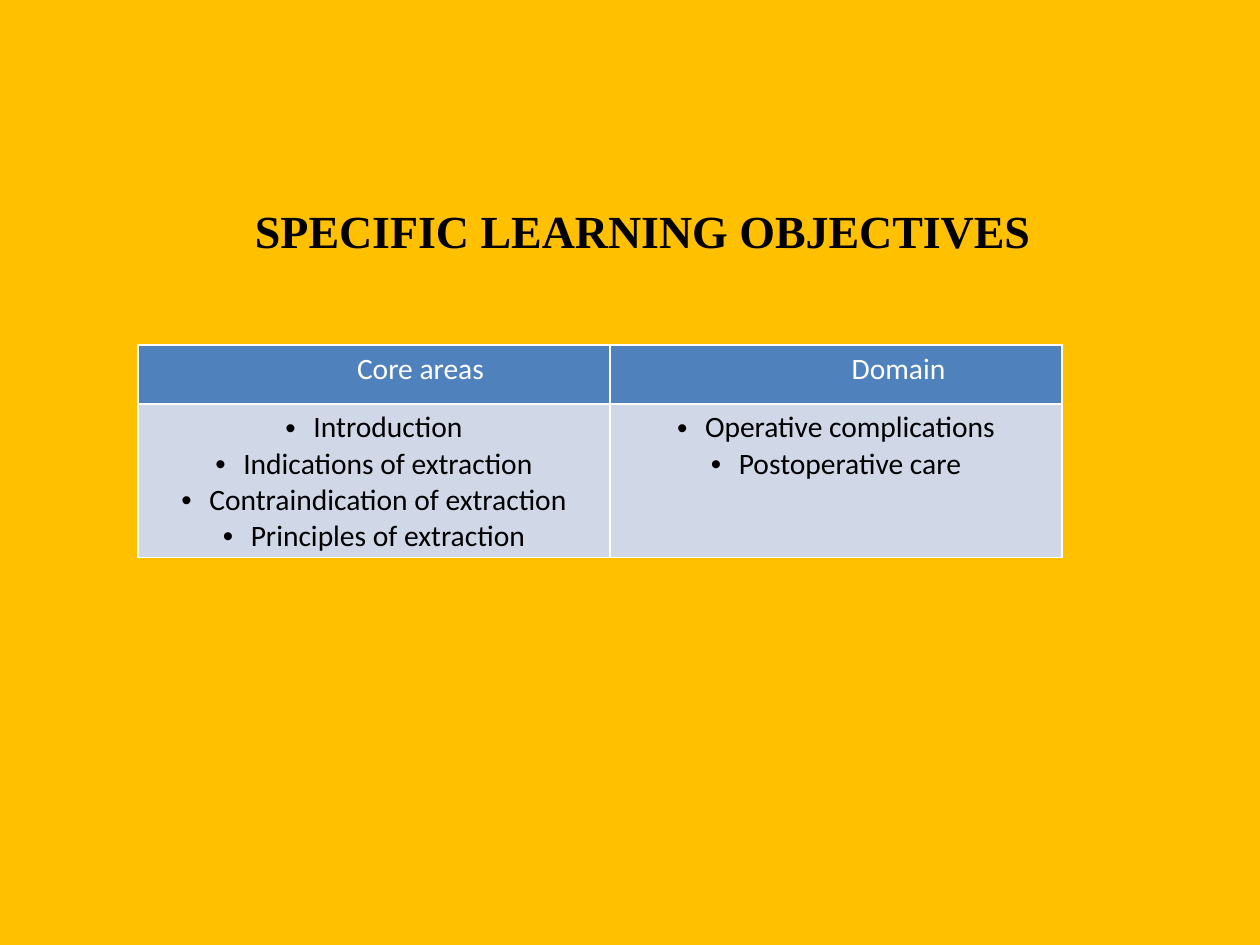
from dataclasses import dataclass

from lxml.etree import SubElement
from pptx import Presentation
from pptx.dml.color import RGBColor
from pptx.enum.text import MSO_AUTO_SIZE, PP_ALIGN
from pptx.oxml.ns import qn
from pptx.util import Emu, Pt

EMU_PER_PX = 7741


def px(length):
    return Emu(length * EMU_PER_PX)


@dataclass(frozen=True)
class Theme:
    background: str = "FFC000"
    ink: str = "000000"
    header_ink: str = "FFFFFF"
    header_fill: str = "4F81BD"
    body_fill: str = "D0D8E8"
    border: str = "FFFFFF"
    title_font: str = "Times New Roman"
    table_font: str = "Calibri"
    title_size: int = 28
    table_size: int = 18
    border_width: int = 1
    bullet_indent: int = 28


class SlideBuilder:
    def __init__(self, slide, theme):
        self.slide = slide
        self.theme = theme

    def background(self):
        fill = self.slide.background.fill
        fill.solid()
        fill.fore_color.rgb = RGBColor.from_string(self.theme.background)

    def style_text(self, frame, font, size, color, bold=False):
        for paragraph in frame.paragraphs:
            paragraph.alignment = PP_ALIGN.CENTER
            for run in paragraph.runs:
                run.font.name = font
                run.font.size = Pt(size)
                run.font.bold = bold
                run.font.color.rgb = RGBColor.from_string(color)

    def title(self, text, left, top, width, height):
        box = self.slide.shapes.add_textbox(px(left), px(top), px(width), px(height))
        frame = box.text_frame
        frame.word_wrap = True
        frame.auto_size = MSO_AUTO_SIZE.SHAPE_TO_FIT_TEXT
        frame.text = text
        self.style_text(frame, self.theme.title_font, self.theme.title_size,
                        self.theme.ink, bold=True)

    def table(self, left, top, widths, heights):
        table = self.slide.shapes.add_table(
            len(heights), len(widths), px(left), px(top),
            px(sum(widths)), px(sum(heights))).table
        for column, width in zip(table.columns, widths):
            column.width = px(width)
        for row, height in zip(table.rows, heights):
            row.height = px(height)
        return table

    def cell(self, cell, text, fill, color):
        cell.text_frame.text = text
        self.style_text(cell.text_frame, self.theme.table_font,
                        self.theme.table_size, color)
        self.borders(cell)
        cell.fill.solid()
        cell.fill.fore_color.rgb = RGBColor.from_string(fill)

    def header(self, cell, text, margin_left):
        self.cell(cell, text, self.theme.header_fill, self.theme.header_ink)
        cell.margin_left = px(margin_left)

    def bullet_list(self, cell, items):
        self.cell(cell, "\n".join(items), self.theme.body_fill, self.theme.ink)
        indent = px(self.theme.bullet_indent)
        for paragraph in cell.text_frame.paragraphs:
            properties = paragraph._p.get_or_add_pPr()
            properties.set("marL", str(indent))
            properties.set("indent", str(-indent))
            SubElement(properties, qn("a:buFont"), typeface="Arial")
            SubElement(properties, qn("a:buChar"), char="•")

    def borders(self, cell):
        properties = cell._tc.get_or_add_tcPr()
        for side in ("a:lnL", "a:lnR", "a:lnT", "a:lnB"):
            line = SubElement(properties, qn(side), w=str(Pt(self.theme.border_width)))
            fill = SubElement(line, qn("a:solidFill"))
            SubElement(fill, qn("a:srgbClr"), val=self.theme.border)


def main():
    presentation = Presentation()
    presentation.slide_width = px(1260)
    presentation.slide_height = px(945)
    slide = presentation.slides.add_slide(presentation.slide_layouts[6])
    builder = SlideBuilder(slide, Theme())
    builder.background()

    # Heading
    builder.title("SPECIFIC LEARNING OBJECTIVES", 142, 197, 1001, 67)

    # Objectives: heading, left margin of the heading, topics
    objectives = [
        ("Core areas", 105, ["Introduction", "Indications of extraction",
                             "Contraindication of extraction",
                             "Principles of extraction"]),
        ("Domain", 137, ["Operative complications", "Postoperative care"]),
    ]
    table = builder.table(138, 345, widths=[472, 452], heights=[59, 153])
    for column, (heading, margin_left, topics) in enumerate(objectives):
        builder.header(table.cell(0, column), heading, margin_left)
        builder.bullet_list(table.cell(1, column), topics)

    presentation.save("out.pptx")


if __name__ == "__main__":
    main()
